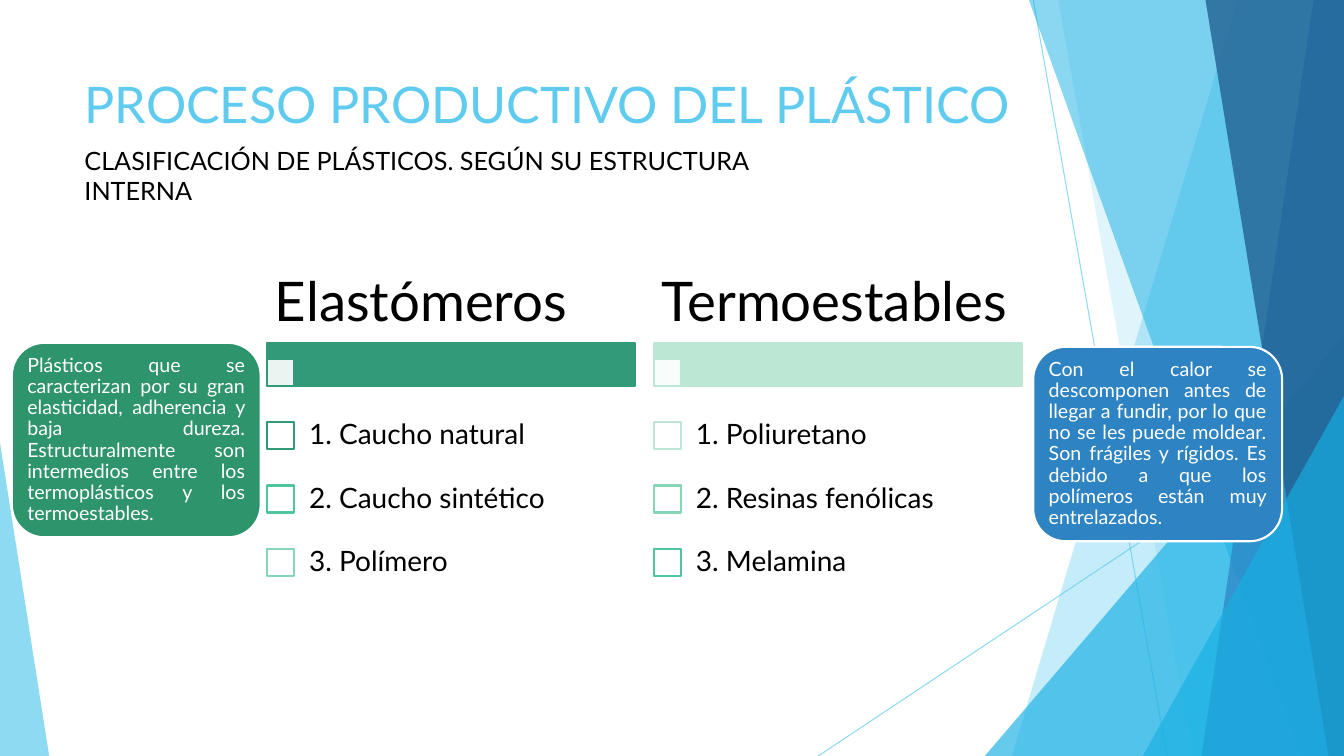
from dataclasses import dataclass

import pptx
import pptx.dml.color
import pptx.enum.shapes
import pptx.enum.text
import pptx.oxml.ns
import pptx.util
from lxml import etree

Cm, Pt = pptx.util.Cm, pptx.util.Pt
KIND = pptx.enum.shapes.MSO_SHAPE
ALIGN = pptx.enum.text.PP_ALIGN
ANCHOR = pptx.enum.text.MSO_ANCHOR
qn = pptx.oxml.ns.qn


@dataclass(frozen=True)
class Theme:
    font: str = "Lato"
    title: int = 36
    head: int = 39
    item: int = 20
    sub: int = 18
    note: int = 14
    ink: str = "000000"
    white: str = "FFFFFF"
    sky: str = "5FCBEF"
    cyan: str = "17B0E4"
    blue: str = "2E83C3"
    navy: str = "226292"
    moss: str = "2E946B"
    green: str = "319A78"
    jade: str = "4EC59A"
    mint: str = "86D5B6"
    pale: str = "BCE7D5"


THEME = Theme()
WIDE, HIGH = 33.87, 19.05


def rgb(code):
    return pptx.dml.color.RGBColor.from_string(code)


def fade(shape, alpha):
    """Set the opacity, in percent, of the first colour of a shape."""
    tint = shape.element.spPr.find(".//" + qn("a:srgbClr"))
    etree.SubElement(tint, qn("a:alpha")).set("val", str(alpha * 1000))


def paint(shape, fill, line=None, alpha=100):
    shape.shadow.inherit = False
    shape.fill.solid()
    shape.fill.fore_color.rgb = rgb(fill)
    if alpha < 100:
        fade(shape, alpha)
    if line:
        shape.line.color.rgb = rgb(line)
        shape.line.width = Pt(1.5)
    else:
        shape.line.fill.background()


def block(slide, kind, box, fill, line=None, alpha=100):
    shape = slide.shapes.add_shape(kind, *map(Cm, box))
    paint(shape, fill, line, alpha)
    return shape


def write(shape, text, size, color, pads=(0.25, 0.13), align=ALIGN.LEFT,
          anchor=ANCHOR.MIDDLE, pitch=0.9):
    frame = shape.text_frame
    frame.word_wrap = True
    frame.auto_size = pptx.enum.text.MSO_AUTO_SIZE.NONE
    frame.vertical_anchor = anchor
    frame.margin_left = frame.margin_right = Cm(pads[0])
    frame.margin_top = frame.margin_bottom = Cm(pads[1])
    para = frame.paragraphs[0]
    para.text = text
    para.alignment = align
    para.line_spacing = pitch
    para.font.name = THEME.font
    para.font.size = Pt(size)
    para.font.color.rgb = rgb(color)


def label(slide, box, text, size, **style):
    shape = slide.shapes.add_textbox(*map(Cm, box))
    write(shape, text, size, THEME.ink, **style)


def ray(slide, *ends):
    line = slide.shapes.add_connector(
        pptx.enum.shapes.MSO_CONNECTOR.STRAIGHT, *map(Cm, ends))
    line.line.color.rgb = rgb(THEME.sky)
    line.line.width = Pt(0.75)
    fade(line, 70)
    etree.SubElement(line.element.spPr, qn("a:effectLst"))


def band(slide, top, foot, color, alpha):
    """Fill from a slanted edge (x at top, x at foot) to the right side."""
    pen = slide.shapes.build_freeform(Cm(top), 0)
    pen.add_line_segments(
        [(Cm(x), Cm(y)) for x, y in ((WIDE, 0), (WIDE, HIGH), (foot, HIGH))])
    paint(pen.convert_to_shape(), color, alpha=alpha)


def wedge(slide, left, top, width, tip, color, alpha):
    """Triangle standing on the foot of the slide."""
    box = (left, top, width, HIGH - top)
    shape = block(slide, KIND.ISOSCELES_TRIANGLE, box, color, alpha=alpha)
    shape.adjustments[0] = tip


def backdrop(slide):
    ray(slide, 26.04, 0, 29.41, HIGH)
    ray(slide, WIDE, 10.24, 20.62, HIGH)
    band(slide, 31.19, 25.5, THEME.sky, 36)
    band(slide, 26.67, 30.05, THEME.sky, 20)
    wedge(slide, 24.82, 8.46, 9.05, 1, THEME.cyan, 66)
    band(slide, 25.93, 32.79, THEME.cyan, 50)
    band(slide, 33.1, 30.28, THEME.blue, 70)
    band(slide, 30.38, 33.48, THEME.navy, 80)
    wedge(slide, 28.8, 9.98, 5.07, 1, THEME.cyan, 66)
    wedge(slide, 0, 11.15, 1.24, 0, THEME.sky, 70)


def header(slide, box, title, sub):
    left, top, width, height = box
    shape = slide.shapes.title
    shape.left, shape.top, shape.width, shape.height = map(Cm, box)
    write(shape, title, THEME.title, THEME.sky, align=ALIGN.JUSTIFY,
          anchor=ANCHOR.TOP, pitch=1)
    label(slide, (left, top + 1.83, 18.72, 1.8), sub, THEME.sub,
          anchor=ANCHOR.TOP, pitch=1)


def column(slide, box, head, color, items):
    """Heading over a bar, then one check box and label per item."""
    left, top, width, height = box
    side, row = 0.68, 1.59
    label(slide, (left, top, width, 1.96), head, THEME.head, pads=(0.2, 0.13))
    block(slide, KIND.RECTANGLE, (left, top + 1.96, width, 1.09), color, color)
    block(slide, KIND.RECTANGLE, (left, top + 2.37, side, side),
          THEME.white, color, 90)
    first = top + height - row * len(items)
    for i, (text, edge) in enumerate(items):
        y = first + i * row
        block(slide, KIND.RECTANGLE, (left, y + (row - side) / 2, side, side),
              THEME.white, edge)
        label(slide, (left + 0.65, y, width - 0.65, row), text, THEME.item,
              pads=(0.41, 0.41))


def note(slide, box, text, color):
    shape = block(slide, KIND.ROUNDED_RECTANGLE, box, color, THEME.white)
    write(shape, text, THEME.note, THEME.white, pads=(0.15, 0.15),
          align=ALIGN.JUSTIFY)


def main():
    deck = pptx.Presentation()
    deck.slide_width, deck.slide_height = Cm(WIDE), Cm(HIGH)
    slide = deck.slides.add_slide(deck.slide_layouts[5])
    backdrop(slide)
    header(slide, (1.88, 1.7, 23.88, 3.66), "PROCESO PRODUCTIVO DEL PLÁSTICO",
           "CLASIFICACIÓN DE PLÁSTICOS. SEGÚN SU ESTRUCTURA INTERNA")
    column(slide, (6.73, 6.68, 9.27, 8.28), "Elastómeros", THEME.green, [
        ("1. Caucho natural", THEME.green),
        ("2. Caucho sintético", THEME.jade),
        ("3. Polímero", THEME.mint)])
    column(slide, (16.48, 6.68, 9.27, 8.28), "Termoestables", THEME.pale, [
        ("1. Poliuretano", THEME.pale),
        ("2. Resinas fenólicas", THEME.mint),
        ("3. Melamina", THEME.jade)])
    note(slide, (26.04, 8.74, 6.27, 4.9),
         "Con el calor se descomponen antes de llegar a fundir, por lo que no "
         "se les puede moldear. Son frágiles y rígidos. Es debido a que los "
         "polímeros están muy entrelazados.", THEME.blue)
    note(slide, (0.3, 8.64, 6.27, 4.9),
         "Plásticos que se caracterizan por su gran elasticidad, adherencia y "
         "baja dureza. Estructuralmente son intermedios entre los "
         "termoplásticos y los termoestables.", THEME.moss)
    deck.save("out.pptx")


if __name__ == "__main__":
    main()
